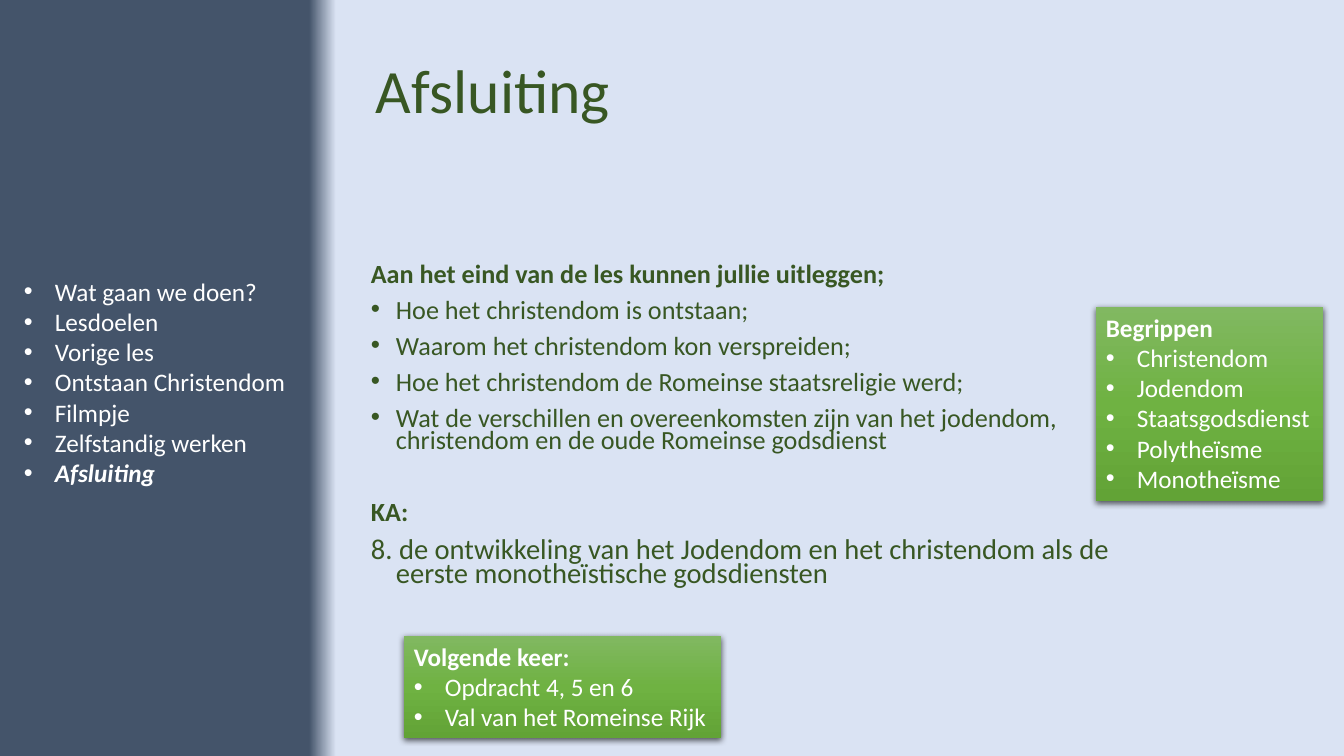
from copy import deepcopy

from lxml.etree import SubElement
from pptx import Presentation
from pptx.dml.color import RGBColor
from pptx.enum.shapes import MSO_SHAPE as SHAPE
from pptx.enum.text import MSO_ANCHOR as ANCHOR, MSO_AUTO_SIZE as AUTO, PP_ALIGN as ALIGN
from pptx.oxml.ns import qn
from pptx.util import Emu, Pt

EMU_PER_PX = 914400 / 100.8
FONT = "Calibri"
WHITE, DARK_GREEN = "FFFFFF", "385723"
BACKGROUND = [(0.23, "44546A"), (0.25, "DAE3F3")]
GREEN_BOX = [(0, "81B861"), (0.5, "6FB242"), (1, "62A336")]


def px(n):
    return Emu(round(n * EMU_PER_PX))


def color(value):
    return RGBColor.from_string(value)


class SlideBuilder:
    def __init__(self, prs):
        self.slide = prs.slides.add_slide(prs.slide_layouts[6])

    def gradient(self, fill, element, stops, angle):
        """Fill with the stops; element is the XML node that holds the fill."""
        fill.gradient()
        fill.gradient_angle = angle
        stop_list = next(element.iter(qn("a:gsLst")))
        for _ in stops[2:]:
            stop_list.append(deepcopy(stop_list[0]))
        for stop, (position, value) in zip(fill.gradient_stops, stops):
            stop.position = position
            stop.color.rgb = color(value)

    def background(self, stops):
        self.gradient(self.slide.background.fill, self.slide._element, stops, 0)

    def text(self, box, wrap=True, anchor=ANCHOR.TOP):
        tf = self.slide.shapes.add_textbox(*map(px, box)).text_frame
        return self.frame(tf, wrap, anchor)

    def card(self, box, heading, items):
        """Green box with a shadow, a bold heading and a bulleted list."""
        sp = self.slide.shapes.add_shape(SHAPE.RECTANGLE, *map(px, box))
        self.gradient(sp.fill, sp._element, GREEN_BOX, 270)
        sp.line.fill.background()
        sp.shadow.inherit = False
        effects = sp._element.spPr.find(qn("a:effectLst"))
        shadow = SubElement(effects, qn("a:outerShdw"), blurRad=str(Pt(4.5)),
                            dist=str(Pt(1.5)), dir="5400000", rotWithShape="0")
        black = SubElement(shadow, qn("a:srgbClr"), val="000000")
        SubElement(black, qn("a:alpha"), val="63000")
        tf = self.frame(sp.text_frame, False, ANCHOR.TOP)
        self.paragraph(tf, heading, bold=True)
        for item in items:
            self.paragraph(tf, item, indent=31, bullet=True)

    def frame(self, tf, wrap, anchor):
        tf.word_wrap = wrap
        tf.auto_size = AUTO.NONE if wrap else AUTO.SHAPE_TO_FIT_TEXT
        tf.vertical_anchor = anchor
        return tf

    def paragraph(self, tf, text, size=18, ink=WHITE, bold=False, italic=False,
                  indent=0, bullet=False, spacing=1.0, before=0):
        p = tf.paragraphs[0]
        if p.runs:
            p = tf.add_paragraph()
        p.alignment = ALIGN.LEFT
        p.line_spacing = spacing
        p.space_before = Pt(before)
        props = p._p.get_or_add_pPr()
        if indent:
            props.set("marL", str(px(indent)))
            props.set("indent", str(-px(indent)))
        if bullet:
            SubElement(props, qn("a:buFont"), typeface="Arial")
            SubElement(props, qn("a:buChar"), char="•")
        r = p.add_run()
        r.text = text
        r.font.name = FONT
        r.font.size = Pt(size)
        r.font.bold = bold
        r.font.italic = italic
        r.font.color.rgb = color(ink)


def main():
    prs = Presentation()
    prs.slide_width, prs.slide_height = px(1344), px(756)
    s = SlideBuilder(prs)
    s.background(BACKGROUND)

    title = s.text((366, 21, 927, 146), anchor=ANCHOR.MIDDLE)
    s.paragraph(title, "Afsluiting", size=44, ink=DARK_GREEN, spacing=0.9)

    agenda = s.text((14, 271, 285, 224), wrap=False)
    for item in ("Wat gaan we doen?", "Lesdoelen", "Vorige les", "Ontstaan Christendom",
                 "Filmpje", "Zelfstandig werken"):
        s.paragraph(agenda, item, indent=31, bullet=True)
    s.paragraph(agenda, "Afsluiting", bold=True, italic=True, indent=31, bullet=True)

    goals = s.text((361, 261, 796, 362))
    style = dict(size=18.7, ink=DARK_GREEN, spacing=0.7, before=10)
    s.paragraph(goals, "Aan het eind van de les kunnen jullie uitleggen;", bold=True, **style)
    for goal in (
        "Hoe het christendom is ontstaan;",
        "Waarom het christendom kon verspreiden;",
        "Hoe het christendom de Romeinse staatsreligie werd;",
        "Wat de verschillen en overeenkomsten zijn van het jodendom, "
        "christendom en de oude Romeinse godsdienst",
    ):
        s.paragraph(goals, goal, indent=25, bullet=True, **style)
    s.paragraph(goals, "KA:", bold=True, **{**style, "before": 36})
    s.paragraph(goals, "8. de ontwikkeling van het Jodendom en het christendom als de "
                "eerste monotheïstische godsdiensten", indent=25, **{**style, "size": 20.4})

    s.card((1096, 307, 227, 194), "Begrippen",
           ("Christendom", "Jodendom", "Staatsgodsdienst", "Polytheïsme", "Monotheïsme"))
    s.card((404, 636, 317, 102), "Volgende keer:",
           ("Opdracht 4, 5 en 6", "Val van het Romeinse Rijk"))

    prs.save("out.pptx")


if __name__ == "__main__":
    main()
